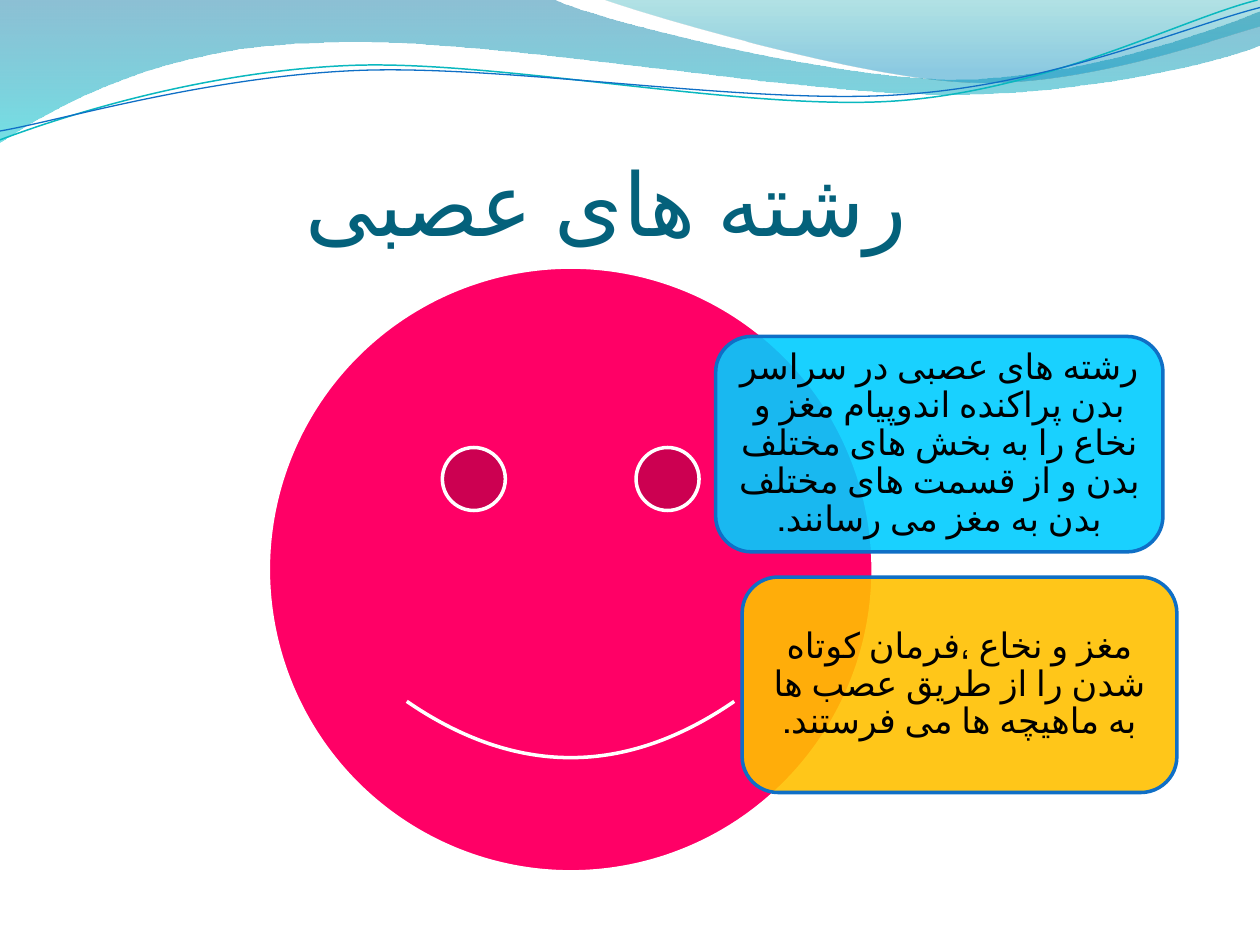
"""Build the slide about nerve fibres with python-pptx."""
import pptx
import pptx.dml.color
import pptx.enum.lang
import pptx.enum.shapes
import pptx.enum.text
import pptx.oxml.ns
import pptx.util
from lxml import etree
from pptx.util import Inches

COLORS = {
    "deep": "0074A1", "aqua": "00C6CF", "teal": "00A1A9", "sky": "008BBF",
    "thin_teal": "0AB8BF", "blue": "0F6FC6", "title": "04617B", "pink": "FF0066",
    "cyan": "00CCFF", "amber": "FFC000", "white": "FFFFFF", "black": "000000",
}
LARGE_WAVE = [
    [(0, 0)], [(4.4, 0)],
    [(4.76, 0.17), (6.64, 0.63), (7.58, 0.63)],
    [(8.53, 0.63), (9.58, 0.26), (10, 0.09)],
    [(10, 0.36)],
    [(9.83, 0.44), (8.7, 0.76), (7.46, 0.75)],
    [(6.22, 0.75), (3.82, 0.28), (2.57, 0.34)],
    [(1.29, 0.36), (0.46, 0.83), (0, 1.13)],
]
SMALL_WAVE = [
    [(4.79, 0)],
    [(5.09, 0.11), (6.82, 0.62), (7.69, 0.65)],
    [(8.56, 0.69), (9.61, 0.32), (10, 0.21)],
    [(10, 0)],
]
TEAL_CURVE = [
    [(0, 1.11)],
    [(0.48, 0.93), (1.58, 0.57), (2.77, 0.52)],
    [(3.95, 0.47), (5.93, 0.89), (7.13, 0.8)],
    [(8.33, 0.71), (9.38, 0.15), (9.98, 0)],
]
BLUE_CURVE = [
    [(0, 1.04)],
    [(0.47, 0.96), (1.64, 0.61), (2.83, 0.56)],
    [(4.03, 0.51), (5.97, 0.84), (7.17, 0.75)],
    [(8.36, 0.67), (9.41, 0.21), (10, 0.06)],
]


def rgb(name):
    return pptx.dml.color.RGBColor.from_string(COLORS[name])


def set_opacities(shape, percents):
    properties = shape.element.spPr
    fill = properties.find(pptx.oxml.ns.qn("a:gradFill"))
    if fill is None:
        fill = properties.find(pptx.oxml.ns.qn("a:solidFill"))
    for color, percent in zip(fill.findall(".//" + pptx.oxml.ns.qn("a:srgbClr")), percents):
        alpha = etree.SubElement(color, pptx.oxml.ns.qn("a:alpha"))
        alpha.set("val", str(percent * 1000))


def set_line(shape, color, width):
    shape.line.color.rgb = rgb(color)
    shape.line.width = pptx.util.Pt(width)


def bend_segments(shape, segments):
    lines = iter(shape.element.findall(".//" + pptx.oxml.ns.qn("a:lnTo")))
    for segment in segments:
        parts = [next(lines) for _ in segment]
        if len(parts) == 3:
            curve = etree.Element(pptx.oxml.ns.qn("a:cubicBezTo"))
            parts[0].addprevious(curve)
            for part in parts:
                curve.append(part[0])
                part.getparent().remove(part)


def add_outline(slide, segments, closed):
    start, *others = [(Inches(x), Inches(y)) for segment in segments for x, y in segment]
    builder = slide.shapes.build_freeform(*start)
    builder.add_line_segments(others, close=closed)
    shape = builder.convert_to_shape()
    bend_segments(shape, segments[1:])
    shape.shadow.inherit = False
    return shape


def add_wave(slide, segments, stops):
    shape = add_outline(slide, segments, True)
    shape.line.fill.background()
    shape.fill.gradient()
    shape.fill.gradient_angle = 270
    for stop, (position, color, _) in zip(shape.fill.gradient_stops, stops):
        stop.position = position
        stop.color.rgb = rgb(color)
    set_opacities(shape, [opacity for _, _, opacity in stops])


def add_curve(slide, segments, color, width):
    shape = add_outline(slide, segments, False)
    shape.fill.background()
    set_line(shape, color, width)


def add_shape(slide, kind, box, fill, line):
    shape = slide.shapes.add_shape(kind, *map(Inches, box))
    shape.shadow.inherit = False
    shape.fill.solid()
    shape.fill.fore_color.rgb = rgb(fill)
    set_line(shape, line, 2)
    return shape


def write_text(frame, text, alignment, font, size, color):
    paragraph = frame.paragraphs[0]
    paragraph.alignment = alignment
    paragraph._p.get_or_add_pPr().set("rtl", "1")
    run = paragraph.add_run()
    run.text = text
    run.font.name = font
    run.font.size = pptx.util.Pt(size)
    run.font.color.rgb = rgb(color)
    run.font.language_id = pptx.enum.lang.MSO_LANGUAGE_ID.FARSI
    return paragraph


def set_frame(frame, anchor, margins):
    frame.word_wrap = True
    frame.auto_size = pptx.enum.text.MSO_AUTO_SIZE.NONE
    frame.vertical_anchor = anchor
    (frame.margin_left, frame.margin_top,
     frame.margin_right, frame.margin_bottom) = map(Inches, margins)


def add_title(slide, text):
    title = slide.shapes.title
    title.left, title.top, title.width, title.height = map(Inches, (0.5, 0.77, 9, 1.25))
    set_frame(title.text_frame, pptx.enum.text.MSO_ANCHOR.BOTTOM, (0, 0.05, 2.3, 0))
    write_text(title.text_frame, text, pptx.enum.text.PP_ALIGN.RIGHT, "Calibri", 50, "title")
    slide.shapes.element.append(title.element)


def add_card(slide, box, fill, text):
    card = add_shape(slide, pptx.enum.shapes.MSO_SHAPE.ROUNDED_RECTANGLE, box, fill, "blue")
    set_opacities(card, [90])
    set_frame(card.text_frame, pptx.enum.text.MSO_ANCHOR.MIDDLE, (0.08,) * 4)
    paragraph = write_text(card.text_frame, text, pptx.enum.text.PP_ALIGN.CENTER,
                           "Vollkorn", 20, "black")
    paragraph.line_spacing = 0.9


def main():
    presentation = pptx.Presentation()
    presentation.slide_width, presentation.slide_height = Inches(10), Inches(7.5)
    slide = presentation.slides.add_slide(presentation.slide_layouts[5])
    add_wave(slide, LARGE_WAVE, [(0, "deep", 45), (1, "aqua", 55)])
    add_wave(slide, SMALL_WAVE, [(0, "teal", 30), (0.8, "sky", 45)])
    add_curve(slide, TEAL_CURVE, "thin_teal", 0.85)
    add_curve(slide, BLUE_CURVE, "blue", 0.75)
    add_title(slide, "رشته های عصبی")
    add_shape(slide, pptx.enum.shapes.MSO_SHAPE.SMILEY_FACE,
              (2.13, 2.12, 4.8, 4.8), "pink", "white")
    add_card(slide, (5.68, 2.67, 3.55, 1.71), "cyan",
             "رشته های عصبی در سراسر بدن پراکنده اندوپیام مغز و نخاع را به بخش های "
             "مختلف بدن و از قسمت های مختلف بدن به مغز می رسانند.")
    add_card(slide, (5.89, 4.58, 3.45, 1.71), "amber",
             "مغز و نخاع ،فرمان کوتاه شدن را از طریق عصب ها به ماهیچه ها می فرستند.")
    presentation.save("out.pptx")


if __name__ == "__main__":
    main()
